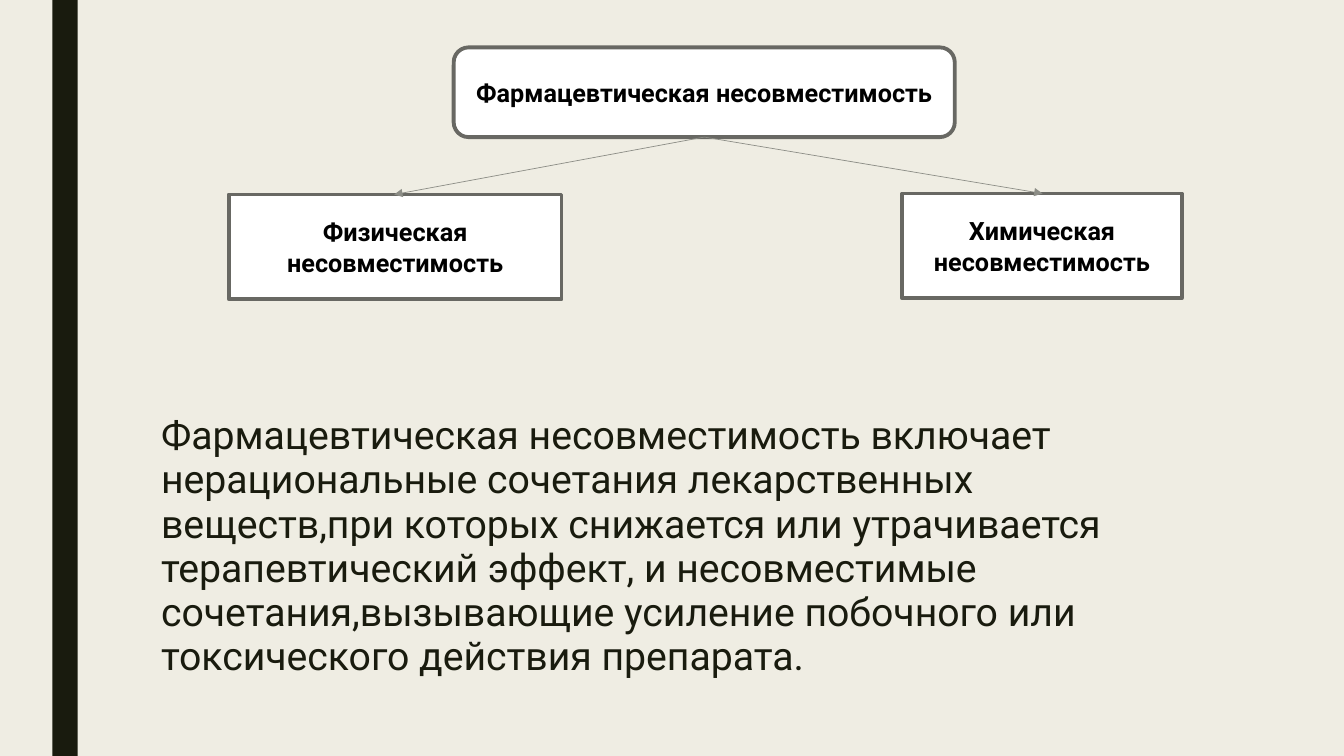
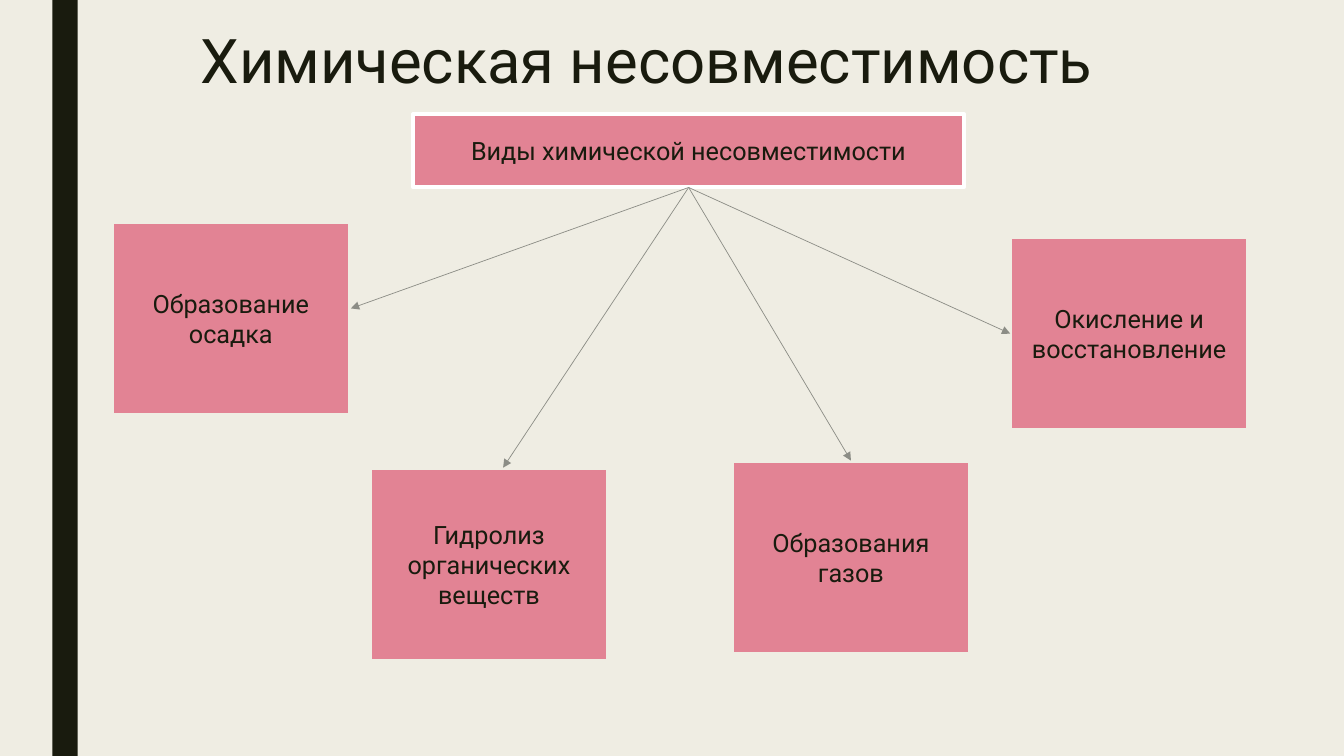
from dataclasses import dataclass

from lxml import etree
from pptx import Presentation
from pptx.dml.color import RGBColor
from pptx.enum.shapes import MSO_CONNECTOR, MSO_SHAPE
from pptx.enum.text import MSO_ANCHOR, PP_ALIGN
from pptx.oxml.ns import qn
from pptx.util import Inches, Pt

RECTANGLE = MSO_SHAPE.RECTANGLE
ROUNDED = MSO_SHAPE.ROUNDED_RECTANGLE
STRAIGHT = MSO_CONNECTOR.STRAIGHT
MIDDLE = MSO_ANCHOR.MIDDLE
TOP = MSO_ANCHOR.TOP
CENTER = PP_ALIGN.CENTER
LEFT = PP_ALIGN.LEFT
BLANK_LAYOUT = 6
BOTTOM_SITE = 2


@dataclass(frozen=True)
class Theme:
    font: str = "Roboto"
    background: str = "EFEDE3"
    dark: str = "191B0E"
    black: str = "000000"
    white: str = "FFFFFF"
    frame: str = "686863"
    pink: str = "E28394"
    arrow: str = "8C8D86"
    title_size: float = 44
    body_size: float = 28
    box_size: float = 18
    frame_width: float = 2.75
    arrow_width: float = 0.5


@dataclass(frozen=True)
class BoxStyle:
    fill: str
    line: str
    text: str
    bold: bool = False


THEME = Theme()
FRAMED = BoxStyle(THEME.white, THEME.frame, THEME.black, True)
HEADING = BoxStyle(THEME.pink, THEME.white, THEME.dark)
KIND = BoxStyle(THEME.pink, THEME.background, THEME.dark)


def rgb(value):
    return RGBColor.from_string(value)


def write(shape, text, size, color, bold=False, align=LEFT, anchor=TOP):
    frame = shape.text_frame
    frame.word_wrap = True
    frame.vertical_anchor = anchor
    paragraph = frame.paragraphs[0]
    paragraph.text = text
    paragraph.alignment = align
    font = paragraph.font
    font.name = THEME.font
    font.size = Pt(size)
    font.bold = bold
    font.color.rgb = rgb(color)
    return paragraph


def add_filled_shape(slide, kind, position, fill):
    shape = slide.shapes.add_shape(kind, *map(Inches, position))
    shape.shadow.inherit = False
    shape.fill.solid()
    shape.fill.fore_color.rgb = rgb(fill)
    return shape


def add_slide(presentation):
    slide = presentation.slides.add_slide(presentation.slide_layouts[BLANK_LAYOUT])
    slide.background.fill.solid()
    slide.background.fill.fore_color.rgb = rgb(THEME.background)
    band = add_filled_shape(slide, RECTANGLE, (0.52, 0, 0.25, 7.5), THEME.dark)
    band.line.fill.background()
    return slide


def add_text(slide, text, position, size, line_spacing):
    box = slide.shapes.add_textbox(*map(Inches, position))
    paragraph = write(box, text, size, THEME.dark)
    paragraph.line_spacing = line_spacing
    return paragraph


def add_box(slide, text, position, style, kind=RECTANGLE):
    box = add_filled_shape(slide, kind, position, style.fill)
    box.line.color.rgb = rgb(style.line)
    box.line.width = Pt(THEME.frame_width)
    write(box, text, THEME.box_size, style.text, style.bold, CENTER, MIDDLE)
    return box


def add_arrow(slide, source, end):
    start = (source.left + source.width // 2, source.top + source.height)
    arrow = slide.shapes.add_connector(STRAIGHT, *start, *map(Inches, end))
    arrow.begin_connect(source, BOTTOM_SITE)
    arrow.line.color.rgb = rgb(THEME.arrow)
    arrow.line.width = Pt(THEME.arrow_width)
    properties = arrow.element.spPr
    etree.SubElement(properties.find(qn("a:ln")), qn("a:tailEnd"), type="triangle")
    etree.SubElement(properties, qn("a:effectLst"))


def add_tree(slide, root, branches, style):
    for text, position, _ in branches:
        add_box(slide, text, position, style)
    for _, _, arrow_end in branches:
        add_arrow(slide, root, arrow_end)


def add_pharmaceutical_slide(presentation):
    slide = add_slide(presentation)
    body = add_text(
        slide,
        "Фармацевтическая несовместимость включает нерациональные сочетания "
        "лекарственных веществ,при которых снижается или утрачивается "
        "терапевтический эффект, и несовместимые сочетания,вызывающие усиление "
        "побочного или токсического действия препарата.",
        (1.5, 4.06, 10.5, 2.75),
        THEME.body_size,
        0.94,
    )
    body.space_before = Pt(10)
    body.space_after = Pt(2)
    root = add_box(
        slide, "Фармацевтическая несовместимость", (4.5, 0.47, 4.97, 0.89), FRAMED, ROUNDED
    )
    branches = [
        ("Физическая несовместимость", (2.27, 1.93, 3.3, 1.04), (3.91, 1.93)),
        ("Химическая несовместимость", (8.95, 1.92, 2.77, 1.04), (10.34, 1.92)),
    ]
    add_tree(slide, root, branches, FRAMED)


def add_chemical_slide(presentation):
    slide = add_slide(presentation)
    add_text(
        slide, "Химическая несовместимость", (1.89, 0.26, 10.5, 0.8), THEME.title_size, 0.89
    )
    root = add_box(slide, "Виды химической несовместимости", (4.1, 1.13, 5.46, 0.73), HEADING)
    kind_size = (2.36, 1.92)
    branches = [
        ("Образование осадка", (1.11, 2.2, *kind_size), (3.48, 3.06)),
        ("Гидролиз органических веществ", (3.67, 4.64, *kind_size), (4.99, 4.64)),
        ("Образования газов", (7.26, 4.57, *kind_size), (8.44, 4.57)),
        ("Окисление и восстановление", (10.02, 2.35, *kind_size), (10.02, 3.31)),
    ]
    add_tree(slide, root, branches, KIND)


def main():
    presentation = Presentation()
    presentation.slide_width = Inches(13.33)
    presentation.slide_height = Inches(7.5)
    add_pharmaceutical_slide(presentation)
    add_chemical_slide(presentation)
    presentation.save("out.pptx")


if __name__ == "__main__":
    main()
